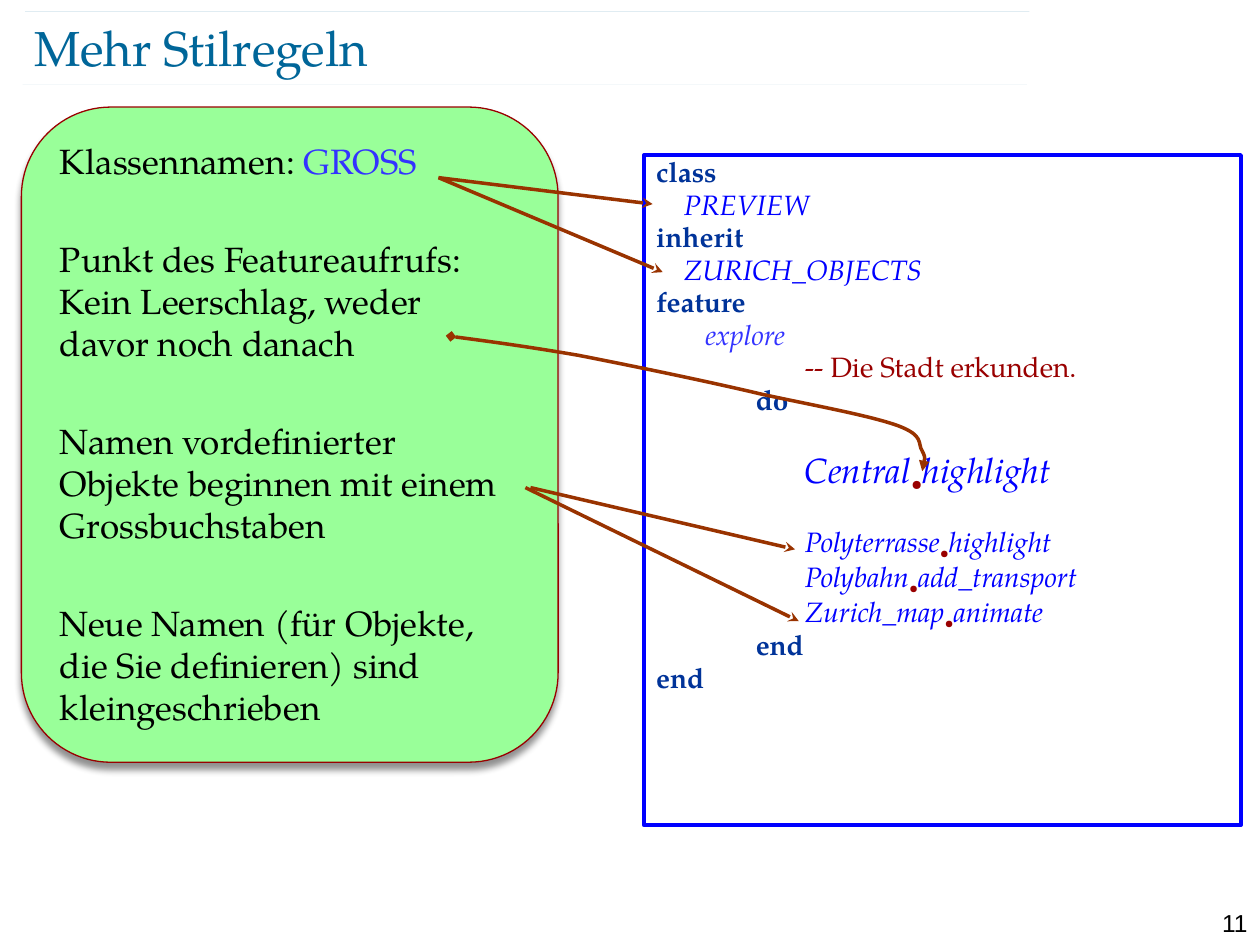
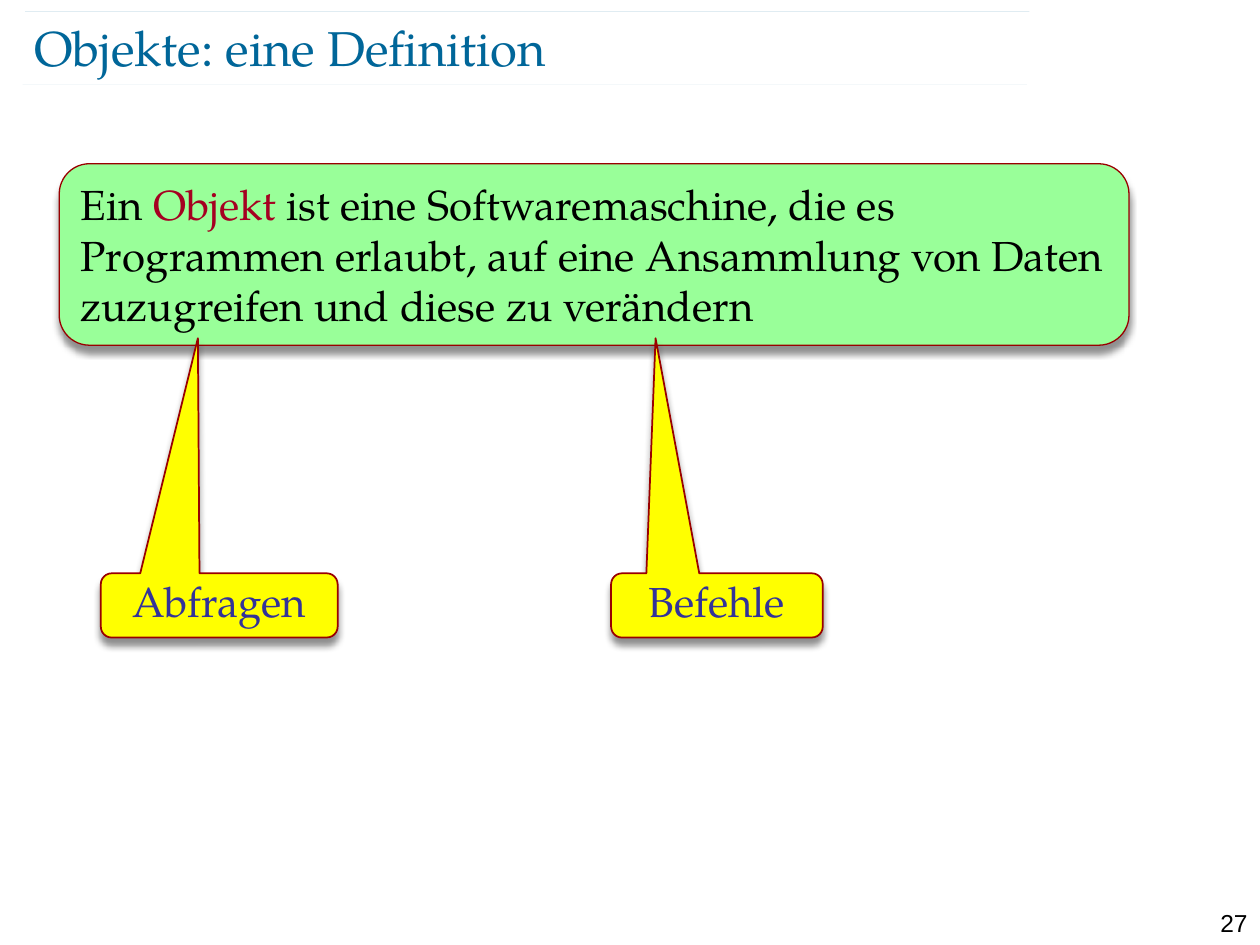
from dataclasses import dataclass

from lxml.etree import SubElement
from pptx import Presentation
from pptx.dml.color import RGBColor
from pptx.enum.shapes import MSO_CONNECTOR, MSO_SHAPE
from pptx.enum.text import MSO_ANCHOR, PP_ALIGN
from pptx.oxml.ns import qn
from pptx.util import Inches, Pt


@dataclass(frozen=True)
class Theme:
    serif: str = "TeX Gyre Pagella"
    sans: str = "Arial"
    title: str = "006699"
    black: str = "000000"
    green: str = "99FF99"
    yellow: str = "FFFF00"
    edge: str = "990000"
    frame: str = "0000FF"
    key: str = "003399"
    name: str = "3333FF"
    label: str = "333399"
    red: str = "A50021"
    arrow: str = "993300"
    title_size: float = 28
    large: float = 24
    body: float = 20
    code: float = 16
    small: float = 14


THEME = Theme()


class Deck:
    def __init__(self, theme):
        self.theme = theme
        self.prs = Presentation()
        self.prs.slide_width = Inches(10)
        self.prs.slide_height = Inches(7.5)
        self.slide = None

    def start(self, title, number):
        """Add a slide with its rules, title and page number."""
        t = self.theme
        self.slide = self.prs.slides.add_slide(self.prs.slide_layouts[6])
        for x, y in ((0.18, 0.67), (0.2, 0.09)):
            rule = self.line((x, y), (x + 7.97, y), t.title, 0.1)
            colour = rule.element.spPr.find(".//" + qn("a:srgbClr"))
            SubElement(colour, qn("a:alpha"), val="35000")
        head = self.text((0.27, 0.13, 8.69, 0.48))
        self.inset(head, 0, 0)
        head.vertical_anchor = MSO_ANCHOR.MIDDLE
        self.para(head, [(title, t.title)], t.title_size)
        page = self.text((9.45, 7.16, 0.55, 0.24))
        par = self.para(page, [(number, t.black)], t.small, font=t.sans)
        par.alignment = PP_ALIGN.RIGHT

    def text(self, box):
        frame = self.slide.shapes.add_textbox(*map(Inches, box)).text_frame
        frame.word_wrap = True
        return frame

    def inset(self, frame, side, end):
        frame.margin_left = frame.margin_right = Inches(side)
        frame.margin_top = frame.margin_bottom = Inches(end)

    def para(self, frame, runs, size, before=0, level=0, spacing=None, font=None):
        """Fill the empty first paragraph, or add one.

        A run is (text, colour) or (text, colour, style); the style
        letters are b bold, i italic, s lowered.
        """
        par = frame.paragraphs[0]
        if par.runs:
            par = frame.add_paragraph()
            par.space_before = Pt(before)
        par.alignment = PP_ALIGN.LEFT
        if spacing:
            par.line_spacing = spacing
        if level:
            props = par._p.get_or_add_pPr()
            props.set("marL", str(Inches(level)))
            props.set("indent", "0")
        for text, colour, *style in runs:
            style = "".join(style)
            run = par.add_run()
            run.text = text
            run.font.name = font or self.theme.serif
            run.font.size = Pt(size)
            run.font.bold = "b" in style
            run.font.italic = "i" in style
            run.font.color.rgb = RGBColor.from_string(colour)
            if "s" in style:
                run.font._element.set("baseline", "-20000")
        return par

    def shape(self, kind, box, edge, width, fill=None, adjust=()):
        """Add an outlined shape; a filled one casts a shadow."""
        item = self.slide.shapes.add_shape(kind, *map(Inches, box))
        for i, value in enumerate(adjust):
            item.adjustments[i] = value
        item.line.color.rgb = RGBColor.from_string(edge)
        item.line.width = Pt(width)
        item.shadow.inherit = False
        if fill:
            item.fill.solid()
            item.fill.fore_color.rgb = RGBColor.from_string(fill)
            effects = item.element.spPr.find(qn("a:effectLst"))
            shade = SubElement(effects, qn("a:outerShdw"), blurRad=str(Pt(4)),
                               dist=str(Pt(4)), dir="5400000", rotWithShape="0")
            colour = SubElement(shade, qn("a:srgbClr"), val=self.theme.black)
            SubElement(colour, qn("a:alpha"), val="43000")
        else:
            item.fill.background()
        frame = item.text_frame
        frame.word_wrap = True
        frame.vertical_anchor = MSO_ANCHOR.TOP
        return frame

    def panel(self, box):
        t = self.theme
        return self.shape(MSO_SHAPE.ROUNDED_RECTANGLE, box, t.edge, 0.75, t.green)

    def callout(self, text, left, width, tip):
        t = self.theme
        frame = self.shape(MSO_SHAPE.ROUNDED_RECTANGULAR_CALLOUT,
                           (left, 4.55, width, 0.51), t.edge, 1, t.yellow,
                           (tip, -4.16, 0.17))
        self.inset(frame, 0, 0.05)
        frame.vertical_anchor = MSO_ANCHOR.MIDDLE
        par = self.para(frame, [(text, t.label)], t.large, spacing=0.8)
        par.alignment = PP_ALIGN.CENTER

    def ends(self, item, colour, width, head=None, tail=None):
        item.line.color.rgb = RGBColor.from_string(colour)
        item.line.width = Pt(width)
        outline = item.element.spPr.find(qn("a:ln"))
        for tag, kind in (("a:headEnd", head), ("a:tailEnd", tail)):
            if kind:
                SubElement(outline, qn(tag), type=kind)

    def line(self, start, end, colour, width, tail=None):
        item = self.slide.shapes.add_connector(
            MSO_CONNECTOR.STRAIGHT, *map(Inches, start + end))
        self.ends(item, colour, width, tail=tail)
        SubElement(item.element.spPr, qn("a:effectLst"))
        return item

    def curve(self, points, colour, width):
        """Draw cubic curves: a start, then three points for each curve."""
        start, *rest = [(Inches(x), Inches(y)) for x, y in points]
        maker = self.slide.shapes.build_freeform(*start)
        maker.add_line_segments(rest, close=False)
        item = maker.convert_to_shape()
        item.fill.background()
        item.shadow.inherit = False
        self.ends(item, colour, width, "diamond", "triangle")
        # Join each three line segments into one curve
        route = item.element.spPr.find(".//" + qn("a:path"))
        steps = route.findall(qn("a:lnTo"))
        for i in range(0, len(steps), 3):
            bend = SubElement(route, qn("a:cubicBezTo"))
            for step in steps[i:i + 3]:
                bend.append(step[0])
                route.remove(step)


def call(target, feature):
    return [(target, THEME.frame, "i"), ("•", THEME.edge, "s"),
            (feature, THEME.frame, "i")]


def rules(deck):
    t = deck.theme
    deck.start("Mehr Stilregeln", "11")

    # Style rules
    panel = deck.panel((0.17, 0.85, 4.26, 5.2))
    for runs in (
        [("Klassennamen: ", t.black), ("GROSS", t.name)],
        [("Punkt des Featureaufrufs: Kein Leerschlag, weder davor noch danach",
          t.black)],
        [("Namen vordefinierter Objekte beginnen mit einem Grossbuchstaben",
          t.black)],
        [("Neue Namen (für Objekte, die Sie definieren) sind kleingeschrieben",
          t.black)],
    ):
        deck.para(panel, runs, t.body, before=32)

    # Class text: indent, runs, size, space before
    tight, wide = 3.2, 22
    code = deck.shape(MSO_SHAPE.RECTANGLE, (5.11, 1.23, 4.74, 5.32), t.frame, 2)
    for level, runs, size, before in (
        (0, [("class", t.key, "b")], t.code, tight),
        (0.22, [("PREVIEW", t.frame, "i")], t.code, tight),
        (0, [("inherit", t.key, "b")], t.code, tight),
        (0.22, [("ZURICH_OBJECTS", t.frame, "i")], t.code, tight),
        (0, [("feature", t.key, "b")], t.code, tight),
        (0.39, [("explore", t.name, "i")], t.code, tight),
        (1.18, [("-- Die Stadt erkunden.", t.edge)], t.code, tight),
        (0.79, [("do", t.key, "b")], t.code, tight),
        (1.18, call("Central", "highlight"), t.body, wide),
        (1.18, call("Polyterrasse", "highlight"), t.code, wide),
        (1.18, call("Polybahn", "add_transport"), t.code, tight),
        (1.18, call("Zurich_map", "animate"), t.code, tight),
        (0.79, [("end", t.key, "b")], t.code, tight),
        (0, [("end", t.key, "b")], t.code, tight),
    ):
        deck.para(code, runs, size, before, level, spacing=0.8)

    # Arrows from rules to code
    for start, end in (((3.48, 1.41), (5.18, 1.62)),
                       ((3.48, 1.41), (5.26, 2.16)),
                       ((4.17, 3.87), (6.34, 4.93)),
                       ((4.21, 3.87), (6.31, 4.36))):
        deck.line(start, end, t.arrow, 2, "stealth")
    deck.curve([(3.58, 2.67),
                (3.88, 2.71), (4.18, 2.75), (4.59, 2.82),
                (5, 2.9), (5.63, 3.03), (6.05, 3.13),
                (6.47, 3.22), (6.91, 3.3), (7.13, 3.38),
                (7.34, 3.46), (7.28, 3.52), (7.32, 3.58),
                (7.35, 3.64), (7.33, 3.69), (7.32, 3.74)], t.arrow, 2)


def objects(deck):
    t = deck.theme
    deck.start("Objekte: eine Definition", "27")

    # Definition
    panel = deck.panel((0.47, 1.3, 8.49, 1.44))
    deck.para(panel, [
        ("Ein ", t.black), ("Objekt", t.red),
        (" ist eine Softwaremaschine, die es Programmen erlaubt, auf eine "
         "Ansammlung von Daten zuzugreifen und diese zu verändern", t.black),
    ], t.large)

    # Callouts
    deck.callout("Abfragen", 0.8, 1.88, -0.09)
    deck.callout("Befehle", 4.85, 1.68, -0.29)


def main():
    deck = Deck(THEME)
    rules(deck)
    objects(deck)
    deck.prs.save("out.pptx")


if __name__ == "__main__":
    main()
